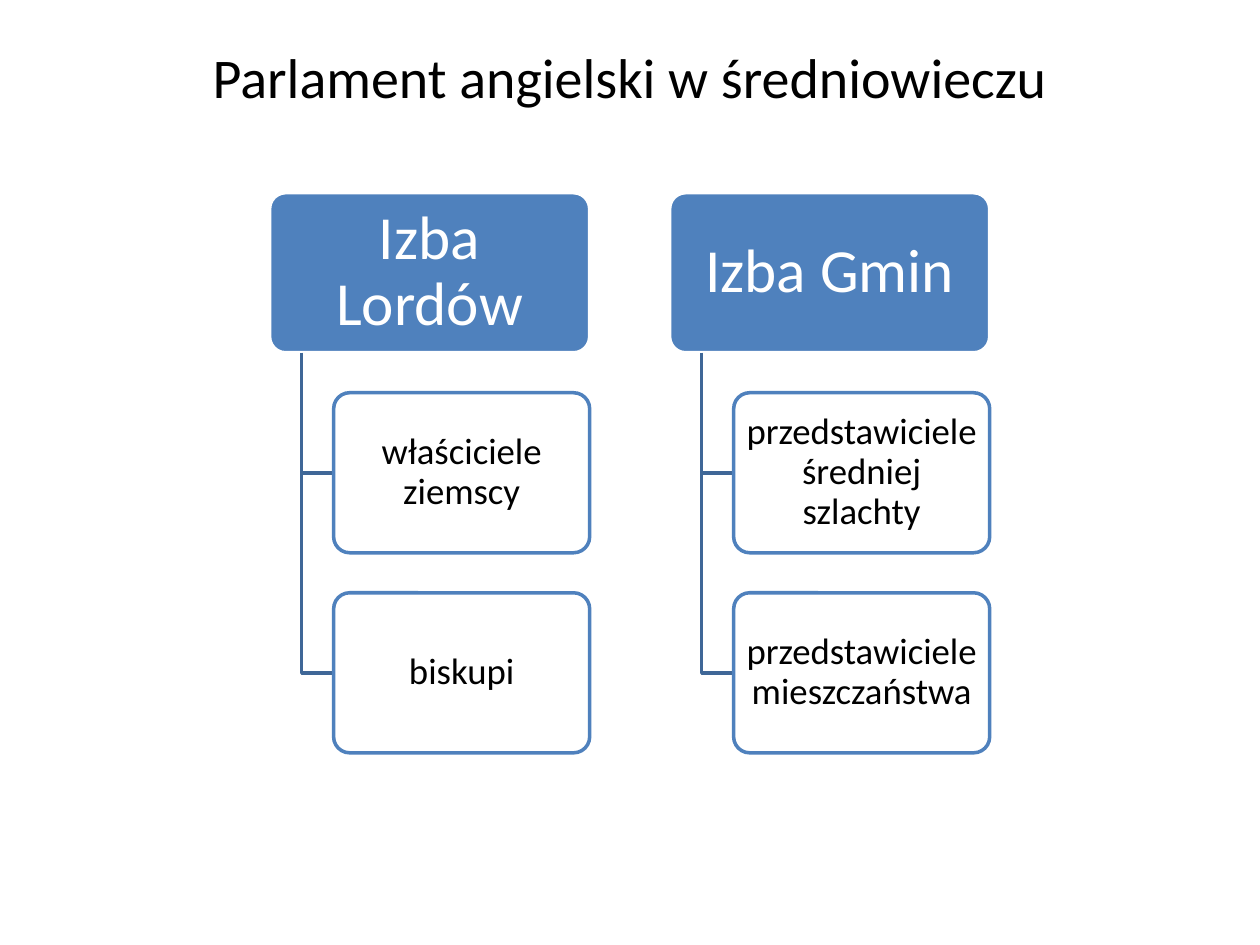
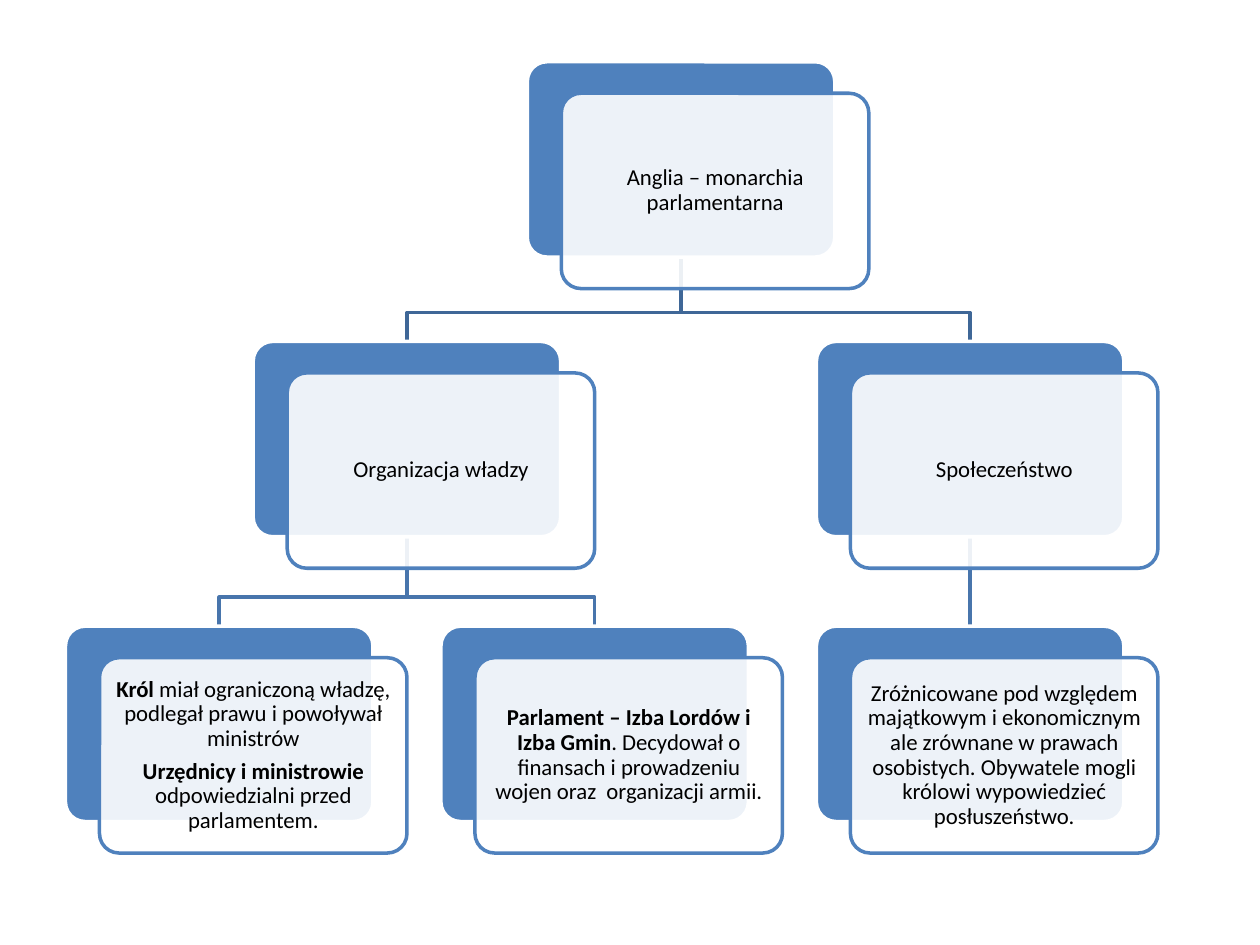
import pptx
import pptx.dml.color
import pptx.enum.shapes
import pptx.enum.text
import pptx.oxml.ns
import pptx.util
from lxml import etree

# Shared look
FONT = "Calibri"
BLUE, WHITE, BLACK = "4F81BD", "FFFFFF", "000000"
UPPER_LINK, LOWER_LINK = "3F6797", "4875AC"
LINE_WIDTH = 2
CORNER = 0.1
SLIDE_WIDTH, SLIDE_HEIGHT = 10, 7.5

# Slide 1 grid: everything follows from the width of a chamber box
CHAMBER_LEFT, CHAMBER_TOP = 2.14, 1.53
CHAMBER_WIDTH = 2.54
CHAMBER_HEIGHT = CHAMBER_WIDTH / 2
PITCH = 1.25
CHAMBERS = [
    ("Izba Lordów", ["właściciele ziemscy", "biskupi"]),
    ("Izba Gmin", ["przedstawiciele średniej szlachty",
                   "przedstawiciele mieszczaństwa"]),
]

# Slide 2 grid: cards sit on columns (fractions allowed) and three rows
CARD_WIDTH, CARD_HEIGHT = 2.44, 1.55
FRONT_SHIFT = (0.27, 0.25)
FIRST_COLUMN, COLUMN_PITCH = 0.52, 2.98
ROW_TOPS = [0.49, 2.71, 4.97]
BEND_ABOVE_CHILD = 0.23
# name: (column, row, paragraphs made of (text, bold) runs)
CARDS = {
    "monarchy": (1.23, 0, [[("Anglia – monarchia parlamentarna", False)]]),
    "power": (0.5, 1, [[("Organizacja władzy", False)]]),
    "society": (2, 1, [[("Społeczeństwo", False)]]),
    "king": (0, 2, [
        [("Król", True),
         (" miał ograniczoną władzę, podlegał prawu i powoływał ministrów", False)],
        [("Urzędnicy i ministrowie ", True),
         ("odpowiedzialni przed parlamentem.", False)]]),
    "parliament": (1, 2, [
        [("Parlament – Izba Lordów i Izba Gmin", True),
         (". Decydował o finansach i prowadzeniu wojen oraz  organizacji armii.",
          False)]]),
    "citizens": (2, 2, [
        [("Zróżnicowane pod względem majątkowym i ekonomicznym ale zrównane "
          "w prawach osobistych. Obywatele mogli królowi wypowiedzieć "
          "posłuszeństwo.", False)]]),
}
LINKS = [("monarchy", "power"), ("monarchy", "society"), ("power", "king"),
         ("power", "parliament"), ("society", "citizens")]


def color(hex_value):
    return pptx.dml.color.RGBColor.from_string(hex_value)


def inches(*lengths):
    return [pptx.util.Inches(length) for length in lengths]


def set_attributes(target, values):
    for name, value in values.items():
        setattr(target, name, value)


def style_line(line, hex_value):
    line.color.rgb = color(hex_value)
    line.width = pptx.util.Pt(LINE_WIDTH)


def write_text(shape, paragraphs, size, hex_value, margins, anchor="MIDDLE",
               spacing=0.9):
    """Fill a shape with centred paragraphs of (text, bold) runs."""
    side, vertical = inches(*margins)
    frame = shape.text_frame
    set_attributes(frame, {
        "word_wrap": True,
        "auto_size": pptx.enum.text.MSO_AUTO_SIZE.NONE,
        "vertical_anchor": pptx.enum.text.MSO_ANCHOR[anchor],
        "margin_left": side, "margin_right": side,
        "margin_top": vertical, "margin_bottom": vertical,
    })
    for index, runs in enumerate(paragraphs):
        paragraph = frame.add_paragraph() if index else frame.paragraphs[0]
        set_attributes(paragraph, {
            "alignment": pptx.enum.text.PP_ALIGN.CENTER,
            "line_spacing": spacing,
            "space_after": pptx.util.Pt(0.35 * size),
        })
        for text, bold in runs:
            run = paragraph.add_run()
            run.text = text
            set_attributes(run.font, {
                "name": FONT, "size": pptx.util.Pt(size), "bold": bold})
            run.font.color.rgb = color(hex_value)


def add_box(slide, left, top, width, height, fill, outline, opacity=100):
    box = slide.shapes.add_shape(
        pptx.enum.shapes.MSO_SHAPE.ROUNDED_RECTANGLE,
        *inches(left, top, width, height))
    box.adjustments[0] = CORNER
    box.shadow.inherit = False
    box.fill.solid()
    box.fill.fore_color.rgb = color(fill)
    if opacity < 100:
        fill_color = box.fill._xPr.find(".//" + pptx.oxml.ns.qn("a:srgbClr"))
        alpha = etree.SubElement(fill_color, pptx.oxml.ns.qn("a:alpha"))
        alpha.set("val", str(opacity * 1000))
    style_line(box.line, outline)
    return box


def add_bent_line(slide, points, hex_value):
    """Draw an open line with square bends through points in inches."""
    start, *others = [inches(*point) for point in points]
    builder = slide.shapes.build_freeform(*start)
    builder.add_line_segments(others, close=False)
    bent_line = builder.convert_to_shape()
    bent_line.fill.background()
    bent_line.shadow.inherit = False
    style_line(bent_line.line, hex_value)
    return bent_line


def add_straight_link(slide, parent, child, hex_value):
    """Join the bottom of the parent with the top of the child."""
    connector = slide.shapes.add_connector(
        pptx.enum.shapes.MSO_CONNECTOR.STRAIGHT, 0, 0, 0, 0)
    connector.begin_connect(parent, 2)
    connector.end_connect(child, 0)
    style_line(connector.line, hex_value)
    properties = connector._element.spPr
    etree.SubElement(properties, pptx.oxml.ns.qn("a:effectLst"))
    return connector


def add_title(slide, text):
    title = slide.shapes.title
    title.left, title.top, title.width, title.height = inches(
        0.05 * SLIDE_WIDTH, 0.29, 0.9 * SLIDE_WIDTH, 0.1 * SLIDE_HEIGHT)
    write_text(title, [[(text, False)]], 32, BLACK, (0.1, 0.05), "TOP", 1)


def add_chamber(slide, column, name, members):
    """Draw a chamber with its members hanging below on a trunk line."""
    left = CHAMBER_LEFT + column * PITCH * CHAMBER_WIDTH
    bottom = CHAMBER_TOP + CHAMBER_HEIGHT
    trunk, member_left = left + 0.1 * CHAMBER_WIDTH, left + 0.2 * CHAMBER_WIDTH
    header = add_box(slide, left, CHAMBER_TOP, CHAMBER_WIDTH, CHAMBER_HEIGHT,
                     BLUE, WHITE)
    write_text(header, [[(name, False)]], 35, WHITE, (0.07, 0.05))
    for row, member in enumerate(members, start=1):
        top = CHAMBER_TOP + row * PITCH * CHAMBER_HEIGHT
        middle = top + CHAMBER_HEIGHT / 2
        add_bent_line(slide, [(trunk, bottom), (trunk, middle),
                              (member_left, middle)], UPPER_LINK)
        box = add_box(slide, member_left, top, 0.8 * CHAMBER_WIDTH,
                      CHAMBER_HEIGHT, WHITE, BLUE, 90)
        write_text(box, [[(member, False)]], 21, BLACK, (0.04, 0.03))


def card_corner(name):
    column, row, _ = CARDS[name]
    return FIRST_COLUMN + column * COLUMN_PITCH, ROW_TOPS[row]


def add_card(slide, name):
    """Draw a blue back card with a shifted, see-through text card."""
    left, top = card_corner(name)
    back = add_box(slide, left, top, CARD_WIDTH, CARD_HEIGHT, BLUE, WHITE)
    front = add_box(slide, left + FRONT_SHIFT[0], top + FRONT_SHIFT[1],
                    CARD_WIDTH, CARD_HEIGHT, WHITE, BLUE, 90)
    write_text(front, CARDS[name][2], 13, BLACK, (0.05, 0.05))
    return back


def add_link(slide, backs, parent, child):
    """Link two cards with a line that lies behind all cards."""
    hex_value = LOWER_LINK if CARDS[parent][1] else UPPER_LINK
    if CARDS[parent][0] == CARDS[child][0]:
        link = add_straight_link(slide, backs[parent], backs[child], hex_value)
    else:
        (parent_left, parent_top), (child_left, child_top) = map(
            card_corner, (parent, child))
        start, end = parent_left + CARD_WIDTH / 2, child_left + CARD_WIDTH / 2
        bend = child_top - BEND_ABOVE_CHILD
        link = add_bent_line(slide, [(start, parent_top + CARD_HEIGHT),
                                     (start, bend), (end, bend),
                                     (end, child_top)], hex_value)
    slide.shapes._spTree.insert(2, link._element)


def main():
    presentation = pptx.Presentation()
    presentation.slide_width, presentation.slide_height = inches(
        SLIDE_WIDTH, SLIDE_HEIGHT)
    title_only, blank = presentation.slide_layouts[5], presentation.slide_layouts[6]

    # Slide 1: the two chambers
    slide = presentation.slides.add_slide(title_only)
    add_title(slide, "Parlament angielski w średniowieczu")
    for column, (name, members) in enumerate(CHAMBERS):
        add_chamber(slide, column, name, members)

    # Slide 2: the parliamentary monarchy as a tree
    slide = presentation.slides.add_slide(blank)
    backs = {name: add_card(slide, name) for name in CARDS}
    for parent, child in LINKS:
        add_link(slide, backs, parent, child)

    presentation.save("out.pptx")


if __name__ == "__main__":
    main()
